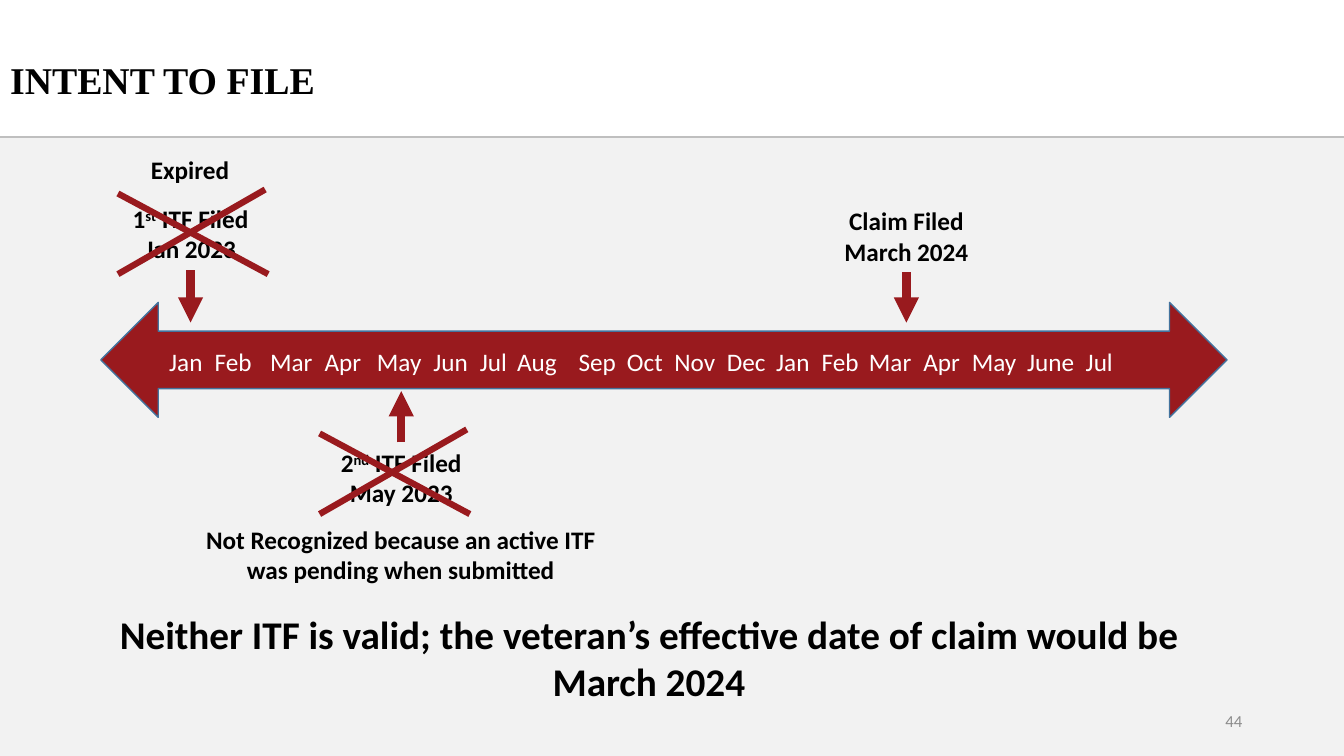
import pptx
import pptx.util
import pptx.dml.color
import pptx.enum.shapes
import pptx.enum.text
import pptx.oxml
import pptx.oxml.ns
from lxml import etree

Inches = pptx.util.Inches
Pt = pptx.util.Pt
SHAPES = pptx.enum.shapes.MSO_SHAPE
ALIGN = pptx.enum.text.PP_ALIGN
ANCHOR = pptx.enum.text.MSO_ANCHOR

COLORS = {
    "panel": "F2F2F2",
    "rule": "BFBFBF",
    "red": "991A1E",
    "outline": "43739E",
    "black": "000000",
    "white": "FFFFFF",
    "gray": "8C8C8C",
}
TITLE = {"name": "Times New Roman", "size": Pt(27), "bold": True}
LABEL = {"name": "Calibri", "size": Pt(18), "bold": True}
CONCLUSION = {"name": "Calibri", "size": Pt(28), "bold": True}
MONTH = {"name": "Calibri", "size": Pt(18), "bold": False}
NUMBER = {"name": "Calibri", "size": Pt(12), "bold": False}

MONTH_STOPS = [
    ("Jan", 0), ("Feb", 0.45), ("Mar", 1), ("Apr", 1.54), ("May", 2.06),
    ("Jun", 2.62), ("Jul", 3.08), ("Aug", 3.45), ("Sep", 4.06),
    ("Oct", 4.54), ("Nov", 5.01), ("Dec", 5.53), ("Jan", 6.02),
    ("Feb", 6.47), ("Mar", 6.94), ("Apr", 7.48), ("May", 7.96),
    ("June", 8.51), ("Jul", 9.09),
]


def rgb(color):
    return pptx.dml.color.RGBColor.from_string(COLORS[color])


def format_font(font, style, color):
    for attribute, value in style.items():
        setattr(font, attribute, value)
    font.color.rgb = rgb(color)


def place(shape, box):
    for side, length in zip(("left", "top", "width", "height"), box):
        setattr(shape, side, Inches(length))


def add_title(slide, text):
    title = slide.shapes.title
    place(title, (0, 0.31, 9.12, 1.02))
    title.text_frame.vertical_anchor = ANCHOR.MIDDLE
    heading = title.text_frame.paragraphs[0]
    heading.alignment = ALIGN.LEFT
    heading.line_spacing = 0.9
    run = heading.add_run()
    run.text = text
    format_font(run.font, TITLE, "black")


def add_block(slide, preset, box, fill, outline=None):
    block = slide.shapes.add_shape(preset, *map(Inches, box))
    block.shadow.inherit = False
    block.fill.solid()
    block.fill.fore_color.rgb = rgb(fill)
    if outline:
        block.line.color.rgb = rgb(outline)
        block.line.width = Pt(1)
    else:
        block.line.fill.background()


def add_text(slide, box, parts, style=LABEL, color="black",
             align=ALIGN.CENTER, anchor=ANCHOR.TOP, stops=()):
    label = slide.shapes.add_textbox(*map(Inches, box))
    frame = label.text_frame
    frame.word_wrap = True
    frame.vertical_anchor = anchor
    paragraph = frame.paragraphs[0]
    paragraph.alignment = align
    if stops:
        properties = paragraph._p.get_or_add_pPr()
        tabs = etree.SubElement(properties, pptx.oxml.ns.qn("a:tabLst"))
        for stop in stops:
            etree.SubElement(tabs, pptx.oxml.ns.qn("a:tab"),
                             pos=str(Inches(stop)), algn="l")
    for index, part in enumerate(parts):
        run = paragraph.add_run()
        run.text = part
        format_font(run.font, style, color)
        if index == 1:
            run._r.get_or_add_rPr().set("baseline", "30000")
    return label


def add_line(slide, start, end, color, width, arrow=False):
    line = slide.shapes.add_connector(
        pptx.enum.shapes.MSO_CONNECTOR.STRAIGHT, *map(Inches, start + end))
    line.line.color.rgb = rgb(color)
    line.line.width = Pt(width)
    if arrow:
        etree.SubElement(line.line._get_or_add_ln(),
                         pptx.oxml.ns.qn("a:tailEnd"), type="triangle")
    etree.SubElement(line._element.spPr, pptx.oxml.ns.qn("a:effectLst"))
    return line


def add_event(slide, box, parts, site, tip):
    label = add_text(slide, box, parts)
    left, top, width, height = box
    middle = left + width / 2
    edge = top if site == 0 else top + height
    pointer = add_line(slide, (middle, edge), (middle, tip), "red", 6, True)
    pointer.begin_connect(label, site)


def add_cross(slide, left, top):
    bottom = top + 0.84
    add_line(slide, (left, top + 0.04), (left + 1.49, bottom), "red", 4.5)
    add_line(slide, (left, bottom), (left + 1.46, top), "red", 4.5)


def main():
    deck = pptx.Presentation()
    deck.slide_width = Inches(13.33)
    deck.slide_height = Inches(7.5)
    slide = deck.slides.add_slide(deck.slide_layouts[5])

    add_block(slide, SHAPES.RECTANGLE, (0, 1.37, 13.33, 6.13), "panel")
    add_line(slide, (0, 1.36), (13.33, 1.36), "rule", 1.5)
    add_title(slide, "INTENT TO FILE")
    add_text(slide, (9.42, 6.95, 3, 0.4), ["44"], NUMBER, "gray",
             ALIGN.RIGHT, ANCHOR.MIDDLE)

    add_block(slide, SHAPES.LEFT_RIGHT_ARROW, (1, 3, 11.17, 1.14),
              "red", "outline")
    months, stops = zip(*MONTH_STOPS)
    add_text(slide, (1.58, 3.39, 10.01, 0.4), ["\t".join(months)], MONTH,
             "white", ALIGN.LEFT, stops=stops[1:])

    add_event(slide, (1.15, 1.97, 1.48, 0.71),
              ["1", "st", " ITF Filed Jan 2023"], 2, 3.2)
    add_event(slide, (3.18, 4.39, 1.6, 0.71),
              ["2", "nd", " ITF Filed May 2023"], 0, 3.88)
    add_event(slide, (8.05, 1.99, 1.88, 0.71),
              ["Claim Filed March 2024"], 2, 3.2)

    add_text(slide, (0.68, 6.01, 11.51, 1.04),
             ["Neither ITF is valid; the veteran’s effective date of claim "
              "would be March 2024"], CONCLUSION)
    add_text(slide, (0.9, 1.48, 1.97, 0.4), ["Expired"])
    add_cross(slide, 1.17, 1.88)
    add_cross(slide, 3.17, 4.26)
    add_text(slide, (1.72, 5.15, 4.51, 0.71),
             ["Not Recognized because an active ITF was pending when "
              "submitted"])
    deck.save("out.pptx")


if __name__ == "__main__":
    main()
